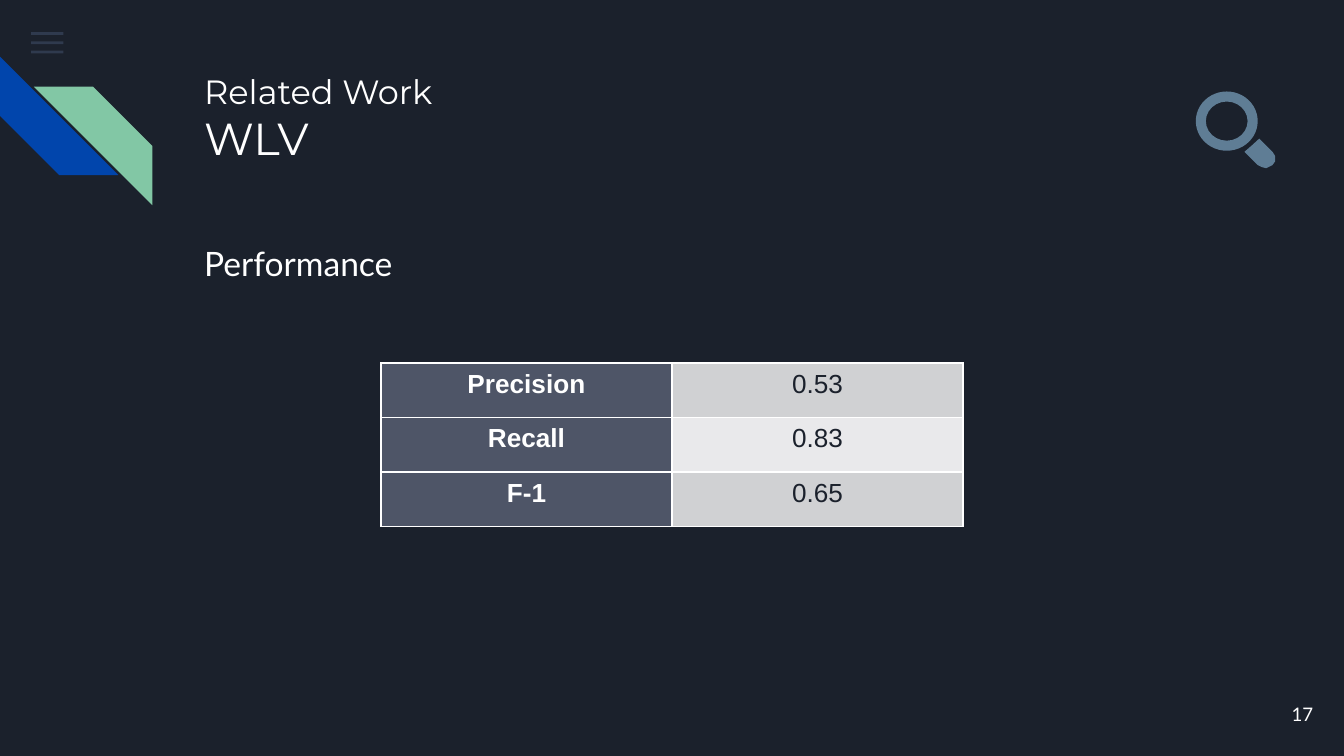
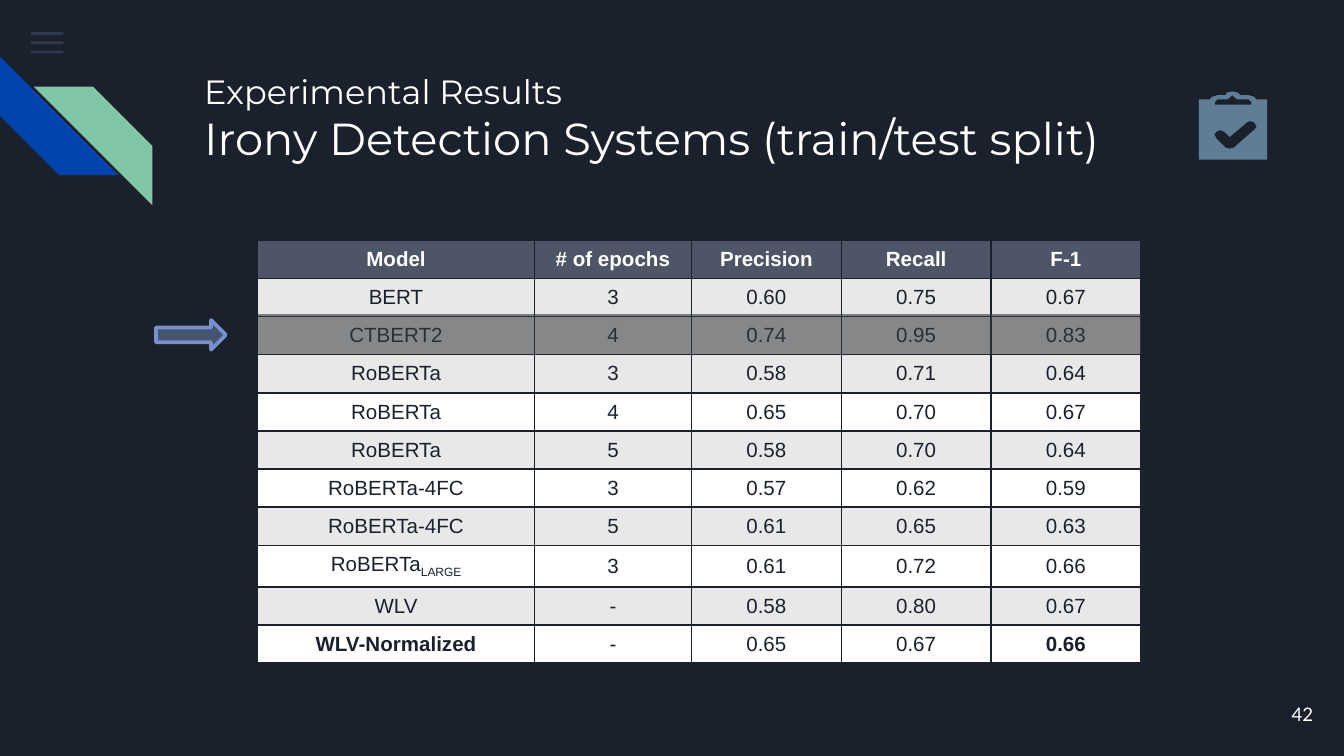
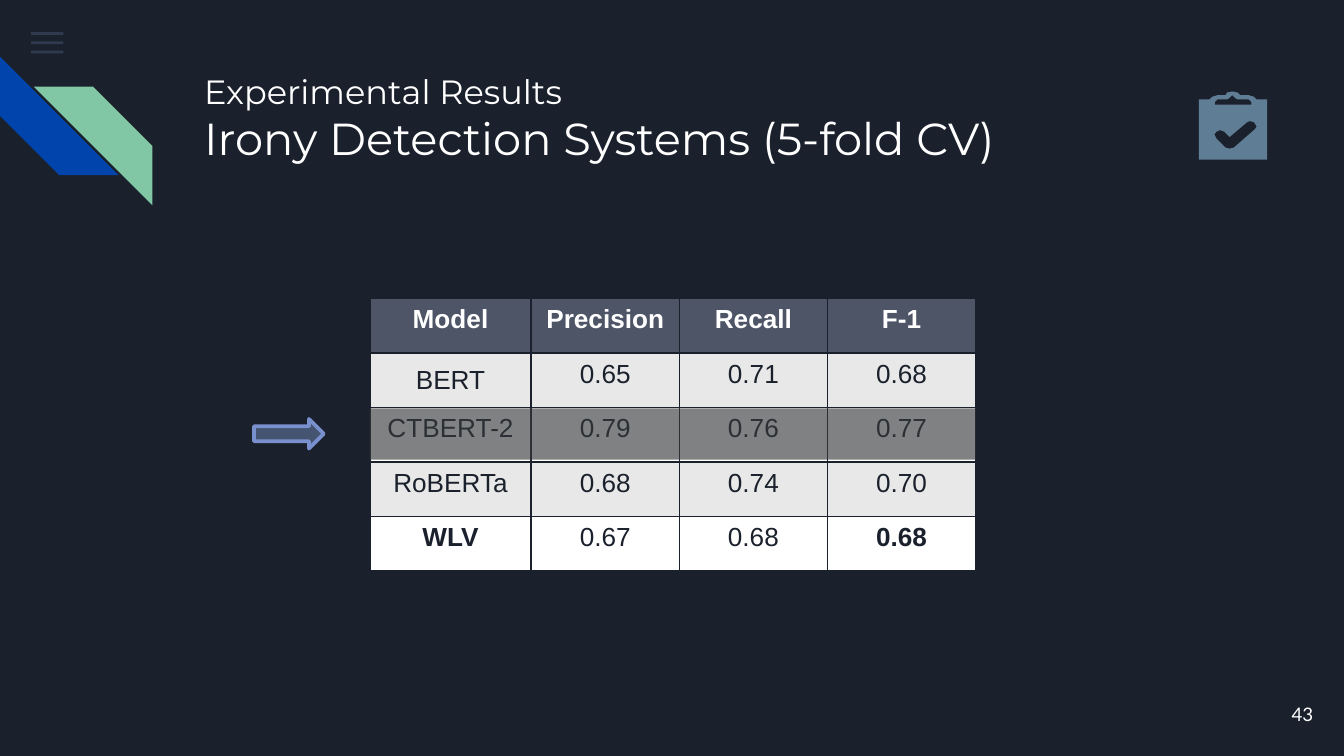
"""Build three dark slides on irony detection results."""
from lxml import etree
from pptx import Presentation
from pptx.dml.color import RGBColor
from pptx.enum import shapes, text
from pptx.oxml import ns
from pptx.util import Cm, Pt

NAVY = RGBColor(0x1B, 0x21, 0x2C)
WHITE = RGBColor(0xFF, 0xFF, 0xFF)
BLUE = RGBColor(0x01, 0x45, 0xAC)
GREEN = RGBColor(0x82, 0xC7, 0xA5)
MENU = RGBColor(0x55, 0x68, 0x8B)
ICON = RGBColor(0x5F, 0x7D, 0x95)
HEADER = RGBColor(0x4E, 0x55, 0x67)
GREY = RGBColor(0xE8, 0xE8, 0xE8)
PALE = RGBColor(0xE9, 0xE9, 0xEB)
SILVER = RGBColor(0xD0, 0xD1, 0xD3)
ARROW = RGBColor(0x45, 0x54, 0x70)
ARROW_LINE = RGBColor(0x78, 0x90, 0xCD)
SHADE = RGBColor(0x36, 0x38, 0x3A)

CENTER, LEFT, RIGHT = text.PP_ALIGN.CENTER, text.PP_ALIGN.LEFT, text.PP_ALIGN.RIGHT
TOP, MIDDLE = text.MSO_ANCHOR.TOP, text.MSO_ANCHOR.MIDDLE
SHAPE = shapes.MSO_SHAPE

HANDLE = [[(2380, 262), (2367, 274), (2352, 287), (2377, 312), (2385, 316), (2393, 318),
           (2405, 312), (2410, 305), (2410, 295), (2405, 287)]]
CLIPBOARD = [
    [(2329, 173), (2319, 175), (2316, 180), (2301, 180), (2291, 183), (2286, 188),
     (2266, 188), (2266, 302), (2395, 302), (2395, 188), (2375, 188), (2370, 183),
     (2360, 180), (2344, 180), (2339, 175)],
    [(2329, 180), (2334, 185), (2339, 188), (2360, 188), (2365, 193), (2365, 198),
     (2296, 198), (2296, 193), (2301, 188), (2319, 188), (2324, 185)],
    [(2362, 229), (2370, 231), (2375, 239), (2372, 244), (2332, 279), (2324, 281),
     (2316, 279), (2299, 262), (2295, 254), (2299, 249), (2306, 246), (2314, 249),
     (2324, 259), (2357, 231)],
]

SLIDES = [
    {"number": "17", "topic": "Related Work", "title": "WLV", "body": "Performance",
     "icon": HANDLE, "at": (7.2, 6.86), "columns": [5.5, 5.5], "row": 1.03,
     "size": 14, "border": WHITE, "bands": [SILVER, PALE], "middle": [], "bold": [],
     "rows": [["Precision", "0.53"], ["Recall", "0.83"], ["F-1", "0.65"]]},
    {"number": "42", "topic": "Experimental Results",
     "title": "Irony Detection Systems (train/test split)",
     "icon": CLIPBOARD, "at": (4.87, 4.54), "columns": [5.23, 2.97, 2.83, 2.83, 2.83],
     "row": 0.71, "size": 11, "border": NAVY, "bands": [WHITE, GREY],
     "middle": range(11), "bold": ["WLV-Normalized"],
     "arrow": (2.95, 6.05), "shade": (4.88, 5.94, 16.69, 0.76), "opacity": 60,
     "rows": [["Model", "# of epochs", "Precision", "Recall", "F-1"],
              ["BERT", "3", "0.60", "0.75", "0.67"],
              ["CTBERT2", "4", "0.74", "0.95", "0.83"],
              ["RoBERTa", "3", "0.58", "0.71", "0.64"],
              ["RoBERTa", "4", "0.65", "0.70", "0.67"],
              ["RoBERTa", "5", "0.58", "0.70", "0.64"],
              ["RoBERTa-4FC", "3", "0.57", "0.62", "0.59"],
              ["RoBERTa-4FC", "5", "0.61", "0.65", "0.63"],
              ["RoBERTa_LARGE", "3", "0.61", "0.72", "0.66"],
              ["WLV", "-", "0.58", "0.80", "0.67"],
              ["WLV-Normalized", "-", "0.65", "0.67", "0.66"]]},
    {"number": "43", "topic": "Experimental Results",
     "title": "Irony Detection Systems (5-fold CV)",
     "icon": CLIPBOARD, "at": (6.99, 5.64), "columns": [3.05, 2.8, 2.8, 2.8],
     "row": 1.03, "size": 14, "border": NAVY, "bands": [WHITE, GREY],
     "middle": [1], "bold": ["WLV"],
     "arrow": (4.8, 7.92), "shade": (6.99, 7.72, 11.45, 0.97), "opacity": 63,
     "rows": [["Model", "Precision", "Recall", "F-1"],
              ["BERT", "0.65", "0.71", "0.68"],
              ["CTBERT-2", "0.79", "0.76", "0.77"],
              ["RoBERTa", "0.68", "0.74", "0.70"],
              ["WLV", "0.67", "0.68", "0.68"]]},
]


def write(paragraph, words, size=18, font="Lato", color=WHITE, bold=False, align=LEFT):
    """Add a formatted run to a paragraph."""
    paragraph.alignment = align
    run = paragraph.add_run()
    run.text = words
    run.font.size = Pt(size)
    run.font.name = font
    run.font.bold = bold
    run.font.color.rgb = color
    return run


def paint(shape, color, opacity=100):
    """Give a shape a plain fill without line or shadow."""
    shape.shadow.inherit = False
    shape.line.fill.background()
    shape.fill.solid()
    shape.fill.fore_color.rgb = color
    if opacity < 100:
        tone = shape.element.spPr.find(".//" + ns.qn("a:srgbClr"))
        etree.SubElement(tone, ns.qn("a:alpha"), val=str(opacity * 1000))


presentation = Presentation()
presentation.slide_width, presentation.slide_height = Cm(25.4), Cm(14.29)

for content in SLIDES:
    slide = presentation.slides.add_slide(presentation.slide_layouts[6])
    slide.background.fill.solid()
    slide.background.fill.fore_color.rgb = NAVY

    for step in range(3):
        bar = slide.shapes.add_shape(
            SHAPE.RECTANGLE, Cm(0.59), Cm(0.61 + 0.175 * step), Cm(0.61), Cm(0.05))
        paint(bar, MENU, 36)
    for left, top, color in [(0, 1.07, BLUE), (0.64, 1.64, GREEN)]:
        stripe = slide.shapes.add_shape(
            SHAPE.DIAGONAL_STRIPE, Cm(left), Cm(top), Cm(2.24), Cm(2.24))
        paint(stripe, color)
        if color == BLUE:
            stripe.rotation = 270
        else:
            stripe.element.spPr.find(ns.qn("a:xfrm")).set("flipH", "1")

    boxes = [("title", 3.61, 1.09, 19.56, 2.54, TOP),
             ("body", 3.61, 4.34, 19.56, 8.08, TOP),
             ("number", 23.55, 12.95, 1.52, 1.09, MIDDLE)]
    for role, left, top, width, height, anchor in boxes:
        if role not in content:
            continue
        frame = slide.shapes.add_textbox(Cm(left), Cm(top), Cm(width), Cm(height)).text_frame
        frame.word_wrap = True
        frame.vertical_anchor = anchor
        frame.margin_left = frame.margin_right = Cm(0.25)
        frame.margin_top = frame.margin_bottom = Cm(0.25)
        paragraph = frame.paragraphs[0]
        if role == "title":
            write(paragraph, content["topic"], font="Montserrat")
            paragraph.add_line_break()
            write(paragraph, content["title"], size=24, font="Montserrat")
        elif role == "body":
            write(paragraph, content["body"])
        else:
            write(paragraph, content["number"], size=10, align=RIGHT)

    contours = content["icon"]
    builder = slide.shapes.build_freeform(*contours[0][0], scale=Cm(0.01))
    for contour in contours:
        builder.move_to(*contour[0])
        builder.add_line_segments(contour[1:], close=True)
    paint(builder.convert_to_shape(), ICON)
    if contours is HANDLE:
        lens = slide.shapes.add_shape(SHAPE.DONUT, Cm(22.6), Cm(1.73), Cm(1.17), Cm(1.12))
        lens.adjustments[0] = 0.17
        paint(lens, ICON)

    rows, columns = content["rows"], content["columns"]
    left, top = content["at"]
    table = slide.shapes.add_table(
        len(rows), len(columns), Cm(left), Cm(top),
        Cm(sum(columns)), Cm(content["row"] * len(rows))).table
    table.first_row = table.horz_banding = False
    for column, width in zip(table.columns, columns):
        column.width = Cm(width)
    for row_index, row in enumerate(rows):
        table.rows[row_index].height = Cm(content["row"])
        for column_index, value in enumerate(row):
            cell = table.cell(row_index, column_index)
            properties = cell._tc.get_or_add_tcPr()
            for side in ("lnL", "lnR", "lnT", "lnB"):
                line = etree.SubElement(properties, ns.qn("a:" + side), w=str(Pt(1)))
                fill = etree.SubElement(line, ns.qn("a:solidFill"))
                etree.SubElement(fill, ns.qn("a:srgbClr"), val=str(content["border"]))
            heading = column_index == 0 if "body" in content else row_index == 0
            cell.fill.solid()
            cell.fill.fore_color.rgb = HEADER if heading else content["bands"][row_index % 2]
            middle = row_index in content["middle"] and (column_index == 0 or len(rows) > 5)
            cell.vertical_anchor = MIDDLE if middle else TOP
            strong = row[0] in content["bold"] and column_index in (0, len(row) - 1)
            style = {"size": content["size"], "font": "Arial", "align": CENTER,
                     "color": WHITE if heading else NAVY, "bold": heading or strong}
            name, _, subscript = value.partition("_")
            write(cell.text_frame.paragraphs[0], name, **style)
            if subscript:
                run = write(cell.text_frame.paragraphs[0], subscript, **style)
                run.font._element.set("baseline", "-25000")

    if "arrow" in content:
        left, top = content["arrow"]
        arrow = slide.shapes.add_shape(SHAPE.RIGHT_ARROW, Cm(left), Cm(top), Cm(1.32), Cm(0.56))
        paint(arrow, ARROW)
        arrow.line.color.rgb = ARROW_LINE
        arrow.line.width = Pt(2)
        shade = slide.shapes.add_shape(SHAPE.RECTANGLE, *map(Cm, content["shade"]))
        paint(shade, SHADE, content["opacity"])

presentation.save("out.pptx")
